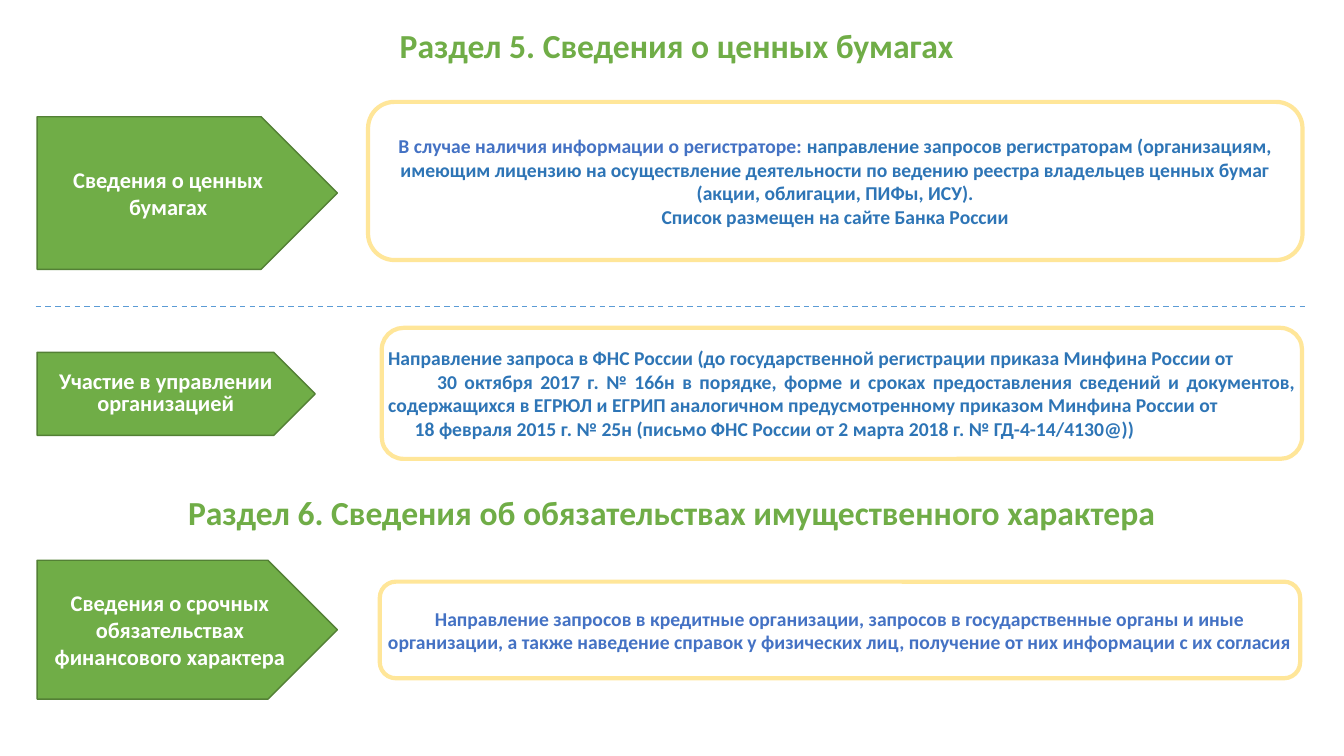
from lxml.etree import SubElement
from pptx import Presentation
from pptx.dml.color import RGBColor
from pptx.enum.dml import MSO_LINE
from pptx.enum.shapes import MSO_CONNECTOR, MSO_SHAPE
from pptx.enum.text import MSO_ANCHOR, PP_ALIGN
from pptx.oxml.ns import qn
from pptx.util import Pt

GREEN, EDGE, GOLD = "70AD47", "538035", "FFE699"
BLUE, DEEP, SKY, WHITE = "4472C4", "2E75B6", "5B9BD5", "FFFFFF"


def color(code):
    return RGBColor.from_string(code)


def write(frame, lines, size, align=PP_ALIGN.CENTER, pad=(7.2, 3.6), space=None):
    frame.word_wrap = True
    frame.margin_left = frame.margin_right = Pt(pad[0])
    frame.margin_top = frame.margin_bottom = Pt(pad[1])
    for i, (indent, runs) in enumerate(lines):
        para = frame.add_paragraph() if i else frame.paragraphs[0]
        para.alignment = align
        if space:
            para.line_spacing = space
        if indent:
            para._p.get_or_add_pPr().set("indent", str(Pt(indent)))
        for text, tint in runs:
            run = para.add_run()
            run.text = text
            run.font.name = "Calibri"
            run.font.size = Pt(size)
            run.font.bold = True
            run.font.color.rgb = color(tint)


def add_form(slide, kind, box, fill, line, width):
    shape = slide.shapes.add_shape(kind, *map(Pt, box))
    shape.shadow.inherit = False
    if fill:
        shape.fill.solid()
        shape.fill.fore_color.rgb = color(fill)
    else:
        shape.fill.background()
    shape.line.color.rgb = color(line)
    shape.line.width = Pt(width)
    shape.text_frame.vertical_anchor = MSO_ANCHOR.MIDDLE
    return shape


def add_title(slide, box, text):
    label = slide.shapes.add_textbox(*map(Pt, box))
    write(label.text_frame, [(0, [(text, GREEN)])], 24)


def add_arrow(slide, box, text, space=None):
    arrow = add_form(slide, MSO_SHAPE.PENTAGON, box, GREEN, EDGE, 1)
    write(arrow.text_frame, [(0, [(text, WHITE)])], 16, space=space)


def add_card(slide, box, lines, align=PP_ALIGN.CENTER):
    card = add_form(slide, MSO_SHAPE.ROUNDED_RECTANGLE, box, None, GOLD, 3)
    write(card.text_frame, lines, 14, align, pad=(0, 0))


def add_rule(slide, left, top, width):
    rule = slide.shapes.add_connector(
        MSO_CONNECTOR.STRAIGHT, Pt(left), Pt(top), Pt(left + width), Pt(top))
    rule.line.color.rgb = color(SKY)
    rule.line.width = Pt(1)
    rule.line.dash_style = MSO_LINE.DASH
    SubElement(rule._element.spPr, qn("a:effectLst"))


def add_papers(slide, left, top):
    add_title(slide, (left + 24, top, 865.5, 36), "Раздел 5. Сведения о ценных бумагах")
    add_arrow(slide, (left, top + 69, 214.5, 109), "Сведения о ценных бумагах")
    add_card(slide, (left + 236.4, top + 58.4, 667.5, 113), [
        (0, [("В случае наличия информации о регистраторе: ", BLUE),
             ("направление запросов регистраторам (организациям, имеющим лицензию "
              "на осуществление деятельности по ведению реестра владельцев ценных "
              "бумаг (акции, облигации, ПИФы, ИСУ).", DEEP)]),
        (0, [("Список размещен на сайте Банка России", DEEP)]),
    ])
    add_rule(slide, left - 1, top + 204.5, 908)
    add_arrow(slide, (left, top + 237.3, 198.7, 59.3),
              "Участие в управлении организацией", 0.8)
    add_card(slide, (left + 246.2, top + 219.8, 657.4, 93.6), [
        (0, [("Направление запроса в ФНС России (до государственной регистрации "
              "приказа Минфина России от", DEEP)]),
        (35, [("30 октября 2017 г. № 166н в порядке, форме и сроках предоставления "
               "сведений и документов, содержащихся в ЕГРЮЛ и ЕГРИП аналогичном "
               "предусмотренному приказом Минфина России от", DEEP)]),
        (19, [("18 февраля 2015 г. № 25н (письмо ФНС России от 2 марта 2018 г. "
               "№ ГД-4-14/4130@))", DEEP)]),
    ], PP_ALIGN.JUSTIFY)


def add_debts(slide, left, top):
    add_title(slide, (left + 16.5, top, 873.5, 36),
              "Раздел 6. Сведения об обязательствах имущественного характера")
    add_arrow(slide, (left, top + 52.4, 214.5, 99.2),
              "Сведения о срочных обязательствах финансового характера")
    add_card(slide, (left + 244.8, top + 67.7, 657.4, 69), [
        (0, [("Направление запросов в кредитные организации, запросов в "
              "государственные органы и иные организации, а также наведение справок "
              "у физических лиц, получение от них информации с их согласия", BLUE)]),
    ])


def main():
    deck = Presentation()
    deck.slide_width, deck.slide_height = Pt(960), Pt(540)
    slide = deck.slides.add_slide(deck.slide_layouts[6])
    add_papers(slide, 26.5, 14.4)
    add_debts(slide, 26.5, 347.8)
    deck.save("out.pptx")


if __name__ == "__main__":
    main()
